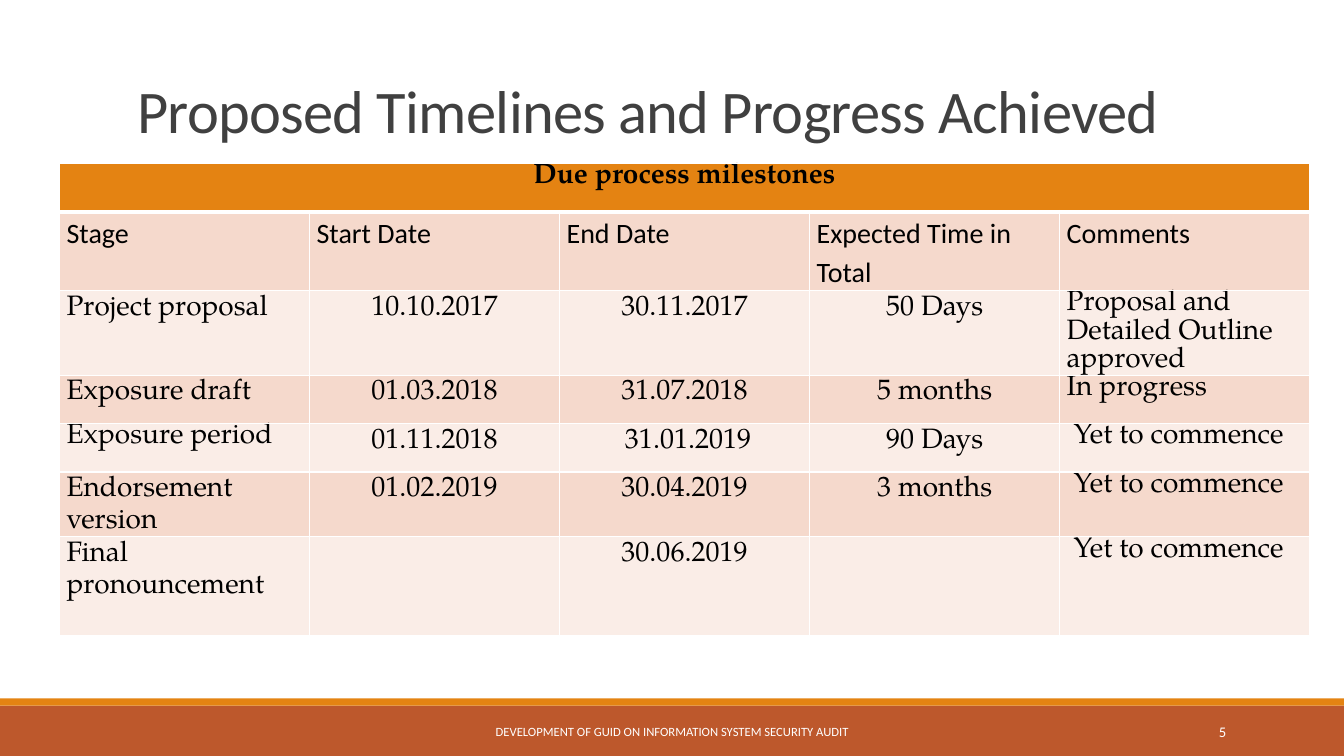
from dataclasses import dataclass

from lxml import etree
from pptx import Presentation
from pptx.dml.color import RGBColor
from pptx.enum.shapes import MSO_SHAPE
from pptx.enum.text import MSO_ANCHOR, MSO_AUTO_SIZE, PP_ALIGN
from pptx.oxml.ns import qn
from pptx.util import Inches, Pt

LEFT, CENTER, RIGHT = PP_ALIGN.LEFT, PP_ALIGN.CENTER, PP_ALIGN.RIGHT
TOP, MIDDLE, BOTTOM = MSO_ANCHOR.TOP, MSO_ANCHOR.MIDDLE, MSO_ANCHOR.BOTTOM
RECTANGLE = MSO_SHAPE.RECTANGLE
NO_AUTOFIT = MSO_AUTO_SIZE.NONE


@dataclass(frozen=True)
class Theme:
    sans: str = "Calibri"
    serif: str = "TeX Gyre Pagella"
    orange: str = "E48312"
    rust: str = "BD582C"
    bands: tuple[str, str] = ("F5D9CC", "FAEDE7")
    white: str = "FFFFFF"
    black: str = "000000"
    title_color: str = "404040"
    title_size: float = 43.2
    table_size: float = 20
    footer_size: float = 9
    number_size: float = 10.5


@dataclass(frozen=True)
class Bar:
    top: float
    height: float
    color: str


@dataclass(frozen=True)
class FooterText:
    text: str
    left: float
    width: float
    size: float
    align: PP_ALIGN


@dataclass(frozen=True)
class Milestone:
    stage: str
    start: str
    end: str
    duration: str
    comment: str
    height: float = 0.48
    stage_spacing: float = 1.15


THEME = Theme()
SLIDE_WIDTH, SLIDE_HEIGHT = 13.33, 7.5
COLUMN_COUNT = 5
COLUMN_WIDTH = 2.48
HEADING_HEIGHT = 0.48
LOOSE = 1.15

BARS = (Bar(7, 0.5, THEME.rust), Bar(6.93, 0.07, THEME.orange))
FOOTER_TEXTS = (
    FooterText("DEVELOPMENT OF GUID ON INFORMATION SYSTEM SECURITY AUDIT",
               4.03, 5.27, THEME.footer_size, CENTER),
    FooterText("5", 10.83, 1.43, THEME.number_size, RIGHT),
)
LABELS = ("Stage", "Start Date", "End Date", "Expected Time in Total", "Comments")
PENDING = "\N{NO-BREAK SPACE}Yet to commence"
MILESTONES = (
    Milestone("Project proposal", "10.10.2017", "30.11.2017", "50 Days",
              "Proposal and Detailed Outline approved", height=0.63),
    Milestone("Exposure draft", "01.03.2018", "31.07.2018", "5 months", "In progress"),
    Milestone("Exposure period", "01.11.2018", " 31.01.2019", "90 Days", PENDING,
              stage_spacing=1),
    Milestone("Endorsement version", "01.02.2019", "30.04.2019", "3 months", PENDING),
    Milestone("Final pronouncement", "", "30.06.2019", "", PENDING, height=0.98),
)


def write_text(frame, text: str, *, size: float, color: str, font: str = THEME.sans,
               align: PP_ALIGN = LEFT, anchor: MSO_ANCHOR = TOP, bold: bool = False,
               line_spacing: float = 1, tracking: float = 0) -> None:
    frame.word_wrap = True
    frame.vertical_anchor = anchor
    para = frame.paragraphs[0]
    para.alignment = align
    para.line_spacing = line_spacing
    span = para.add_run()
    span.text = text
    span.font.name = font
    span.font.size = Pt(size)
    span.font.bold = bold
    span.font.color.rgb = RGBColor.from_string(color)
    if tracking:
        span.font._element.set("spc", str(round(tracking * 100)))


def format_cell(cell, fill: str, bottom_width: float = 1) -> None:
    cell.margin_left = cell.margin_right = Inches(0.07)
    cell.margin_top = cell.margin_bottom = 0
    # Borders go before the fill in the cell properties
    properties = cell._tc.get_or_add_tcPr()
    for side, width in (("L", 1), ("R", 1), ("T", 1), ("B", bottom_width)):
        line = etree.SubElement(properties, qn(f"a:ln{side}"), w=str(Pt(width)))
        solid = etree.SubElement(line, qn("a:solidFill"))
        etree.SubElement(solid, qn("a:srgbClr"), val=THEME.white)
    cell.fill.solid()
    cell.fill.fore_color.rgb = RGBColor.from_string(fill)


def draw_title(page) -> None:
    title = page.shapes.title
    title.left, title.top = Inches(1.26), Inches(0.39)
    title.width, title.height = Inches(11), Inches(1.11)
    title.text_frame.auto_size = NO_AUTOFIT
    write_text(title.text_frame, "Proposed Timelines and Progress Achieved",
               size=THEME.title_size, color=THEME.title_color, anchor=BOTTOM,
               line_spacing=0.85, tracking=-0.5)


def draw_footer(page) -> None:
    for bar in BARS:
        box = page.shapes.add_shape(RECTANGLE, 0, Inches(bar.top),
                                    Inches(SLIDE_WIDTH), Inches(bar.height))
        box.shadow.inherit = False
        box.fill.solid()
        box.fill.fore_color.rgb = RGBColor.from_string(bar.color)
        box.line.fill.background()
    for item in FOOTER_TEXTS:
        box = page.shapes.add_textbox(Inches(item.left), Inches(7.06),
                                      Inches(item.width), Inches(0.4))
        write_text(box.text_frame, item.text, size=item.size, color=THEME.white,
                   align=item.align, anchor=MIDDLE)


def draw_milestones(page) -> None:
    heights = [HEADING_HEIGHT, HEADING_HEIGHT, *(item.height for item in MILESTONES)]
    table = page.shapes.add_table(
        len(heights), COLUMN_COUNT, Inches(0.59), Inches(1.62),
        Inches(COLUMN_WIDTH * COLUMN_COUNT), Inches(sum(heights))).table
    for column in table.columns:
        column.width = Inches(COLUMN_WIDTH)
    for row, height in zip(table.rows, heights):
        row.height = Inches(height)

    # Heading across all columns
    for cell in table.rows[0].cells:
        format_cell(cell, THEME.orange, bottom_width=3)
    heading = table.cell(0, 0)
    heading.merge(table.cell(0, COLUMN_COUNT - 1))
    write_text(heading.text_frame, "Due process milestones", size=THEME.table_size,
               color=THEME.black, font=THEME.serif, align=CENTER, bold=True)

    # Alternating bands
    for row_index in range(1, len(heights)):
        for cell in table.rows[row_index].cells:
            format_cell(cell, THEME.bands[(row_index - 1) % 2])

    # Column labels
    for column_index, label in enumerate(LABELS):
        write_text(table.cell(1, column_index).text_frame, label, size=THEME.table_size,
                   color=THEME.black, line_spacing=LOOSE)

    # Milestone rows
    for row_index, item in enumerate(MILESTONES, start=2):
        entries = (
            (item.stage, LEFT, item.stage_spacing),
            (item.start, CENTER, LOOSE),
            (item.end, CENTER, LOOSE),
            (item.duration, CENTER, LOOSE),
            (item.comment, LEFT, 1),
        )
        for column_index, (text, align, spacing) in enumerate(entries):
            if text:
                write_text(table.cell(row_index, column_index).text_frame, text,
                           size=THEME.table_size, color=THEME.black, font=THEME.serif,
                           align=align, line_spacing=spacing)


def main() -> None:
    deck = Presentation()
    deck.slide_width, deck.slide_height = Inches(SLIDE_WIDTH), Inches(SLIDE_HEIGHT)
    page = deck.slides.add_slide(deck.slide_layouts[5])
    draw_title(page)
    draw_milestones(page)
    draw_footer(page)
    deck.save("out.pptx")


if __name__ == "__main__":
    main()
